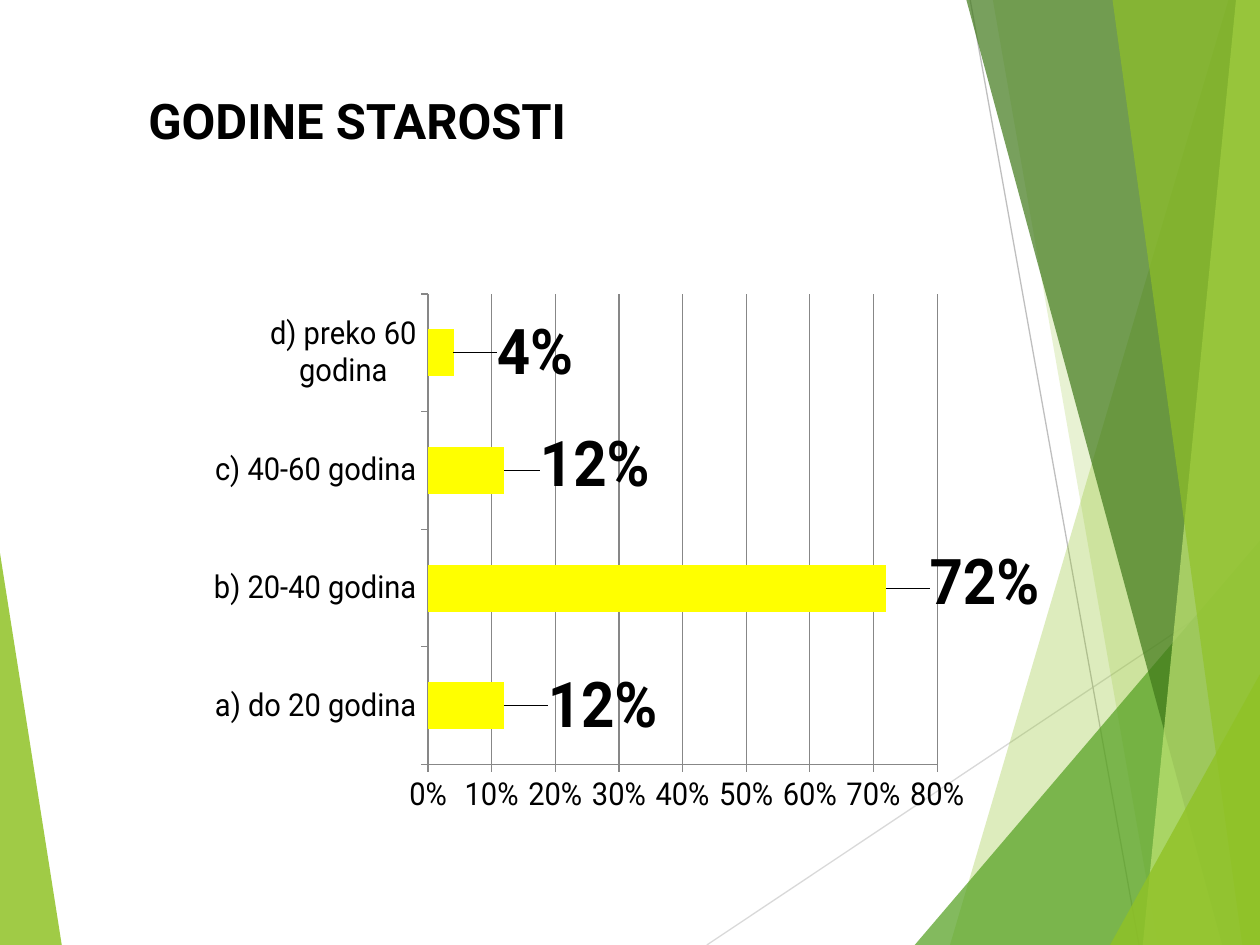
from lxml.etree import SubElement
from pptx import Presentation
from pptx.chart.data import CategoryChartData
from pptx.dml.color import RGBColor
from pptx.enum.chart import XL_CHART_TYPE, XL_LABEL_POSITION, XL_TICK_MARK
from pptx.enum.shapes import MSO_CONNECTOR
from pptx.oxml import parse_xml
from pptx.oxml.ns import nsdecls, qn
from pptx.util import Inches, Pt

COLORS = {
    "black": "000000", "bar": "FFFF00", "grid": "878787",
    "lime": "90C226", "green": "54A021", "forest": "3F7819", "pale": "C0E474",
    "light_line": "D9D9D9", "dark_line": "BFBFBF",
}
FONT = "Roboto"
WIDTH, HEIGHT = 10, 7.5


def color(name):
    return RGBColor.from_string(COLORS[name])


def set_font(font, size, bold=False):
    values = {"name": FONT, "size": Pt(size), "bold": bold}
    for key, value in values.items():
        setattr(font, key, value)
    font.color.rgb = color("black")


deck = Presentation()
deck.slide_width, deck.slide_height = Inches(WIDTH), Inches(HEIGHT)
page = deck.slides.add_slide(deck.slide_layouts[6])

# Background: two thin lines between translucent facets, from back to front
left_facet = ("lime", 85, [(0, 4.39), (0.49, HEIGHT), (0, HEIGHT)])
thin_lines = [
    ("light_line", (5.61, HEIGHT), (WIDTH, 4.57)),
    ("dark_line", (7.7, 0), (9.04, HEIGHT)),
]
# Right-hand facets: colour, opacity, then the left edge from top to bottom
right_facets = [
    ("lime", 30, (9.75, 0), (7.54, HEIGHT)),
    ("lime", 20, (7.88, 0), (9.19, HEIGHT)),
    ("green", 72, (WIDTH, 4.29), (7.26, HEIGHT)),
    ("forest", 70, (7.67, 0), (9.7, HEIGHT)),
    ("pale", 70, (9.81, 0), (9.07, HEIGHT)),
    ("lime", 65, (8.83, 0), (9.86, HEIGHT)),
    ("lime", 80, (WIDTH, 5.35), (8.81, HEIGHT)),
]
facets = [left_facet] + [
    (name, opacity, [top, bottom, (WIDTH, HEIGHT), (WIDTH, top[1])])
    for name, opacity, top, bottom in right_facets
]

for name, start, end in thin_lines:
    line = page.shapes.add_connector(
        MSO_CONNECTOR.STRAIGHT, *(Inches(value) for value in start + end))
    line.line.color.rgb = color(name)
    line.line.width = Pt(0.75)
    SubElement(line._element.spPr, qn("a:effectLst"))

for name, opacity, corners in facets:
    points = [(Inches(x), Inches(y)) for x, y in corners]
    builder = page.shapes.build_freeform(*points[0])
    builder.add_line_segments(points[1:], close=True)
    facet = builder.convert_to_shape()
    facet.shadow.inherit = False
    facet.line.fill.background()
    facet.fill.solid()
    facet.fill.fore_color.rgb = color(name)
    solid = facet._element.spPr.find(qn("a:solidFill"))
    SubElement(solid[0], qn("a:alpha"), val=str(opacity * 1000))

# Bar chart: category, share, label shift as a share of the chart's size
ages = [
    ("a) do 20 godina", 0.12, (0.05, 0)),
    ("b) 20-40 godina", 0.72, (0.05, -0.01)),
    ("c) 40-60 godina", 0.12, (0.04, -0.01)),
    ("d) preko 60 godina", 0.04, (0.05, 0)),
]
data = CategoryChartData(number_format="0%")
data.categories = [category for category, _, _ in ages]
data.add_series("Series 1", [share for _, share, _ in ages])
chart = page.shapes.add_chart(
    XL_CHART_TYPE.BAR_CLUSTERED, Inches(1.58), Inches(2.25),
    Inches(6.67), Inches(4.44), data).chart
chart.has_legend = False
chart.has_title = False
set_font(chart.font, 18)

for axis in (chart.category_axis, chart.value_axis):
    axis.major_tick_mark = XL_TICK_MARK.OUTSIDE
    axis.minor_tick_mark = XL_TICK_MARK.NONE
    axis.format.line.color.rgb = color("grid")
    axis.format.line.width = Pt(0.75)
    set_font(axis.tick_labels.font, 18)
scale = {"minimum_scale": 0, "maximum_scale": 0.8, "major_unit": 0.1,
         "has_major_gridlines": True}
for key, value in scale.items():
    setattr(chart.value_axis, key, value)
chart.value_axis.tick_labels.number_format = "0%"
chart.value_axis.tick_labels.number_format_is_linked = False
grid = chart.value_axis.major_gridlines.format.line
grid.color.rgb = color("grid")
grid.width = Pt(0.75)

plot = chart.plots[0]
plot.gap_width = 150
plot.vary_by_categories = False
bars = plot.series[0]
bars.format.fill.solid()
bars.format.fill.fore_color.rgb = color("bar")
labels = bars.data_labels
labels.show_value = True
labels.number_format = "0%"
labels.number_format_is_linked = False
set_font(labels.font, 36, True)

for index, (_, _, (shift_x, shift_y)) in enumerate(ages):
    label = bars.points[index].data_label
    set_font(label.font, 36, True)
    label.position = XL_LABEL_POSITION.OUTSIDE_END
    element = bars._element.xpath("c:dLbls/c:dLbl")[index]
    element.insert(1, parse_xml(
        f'<c:layout {nsdecls("c")}><c:manualLayout><c:x val="{shift_x}"/>'
        f'<c:y val="{shift_y}"/></c:manualLayout></c:layout>'))

plot_area = chart._chartSpace.chart.plotArea
for old in plot_area.findall(qn("c:layout")):
    plot_area.remove(old)
layout = parse_xml(f'<c:layout {nsdecls("c")}><c:manualLayout/></c:layout>')
frame = {"layoutTarget": "inner", "xMode": "edge", "yMode": "edge",
         "x": 0.295, "y": 0.019, "w": 0.656, "h": 0.841}
for key, value in frame.items():
    SubElement(layout[0], qn(f"c:{key}"), val=str(value))
plot_area.insert(0, layout)

# Title
box = page.shapes.add_textbox(Inches(1.08), Inches(0.67), Inches(8.5), Inches(0.57))
box.text_frame.word_wrap = True
span = box.text_frame.paragraphs[0].add_run()
span.text = "GODINE STAROSTI"
set_font(span.font, 28, True)

deck.save("out.pptx")
